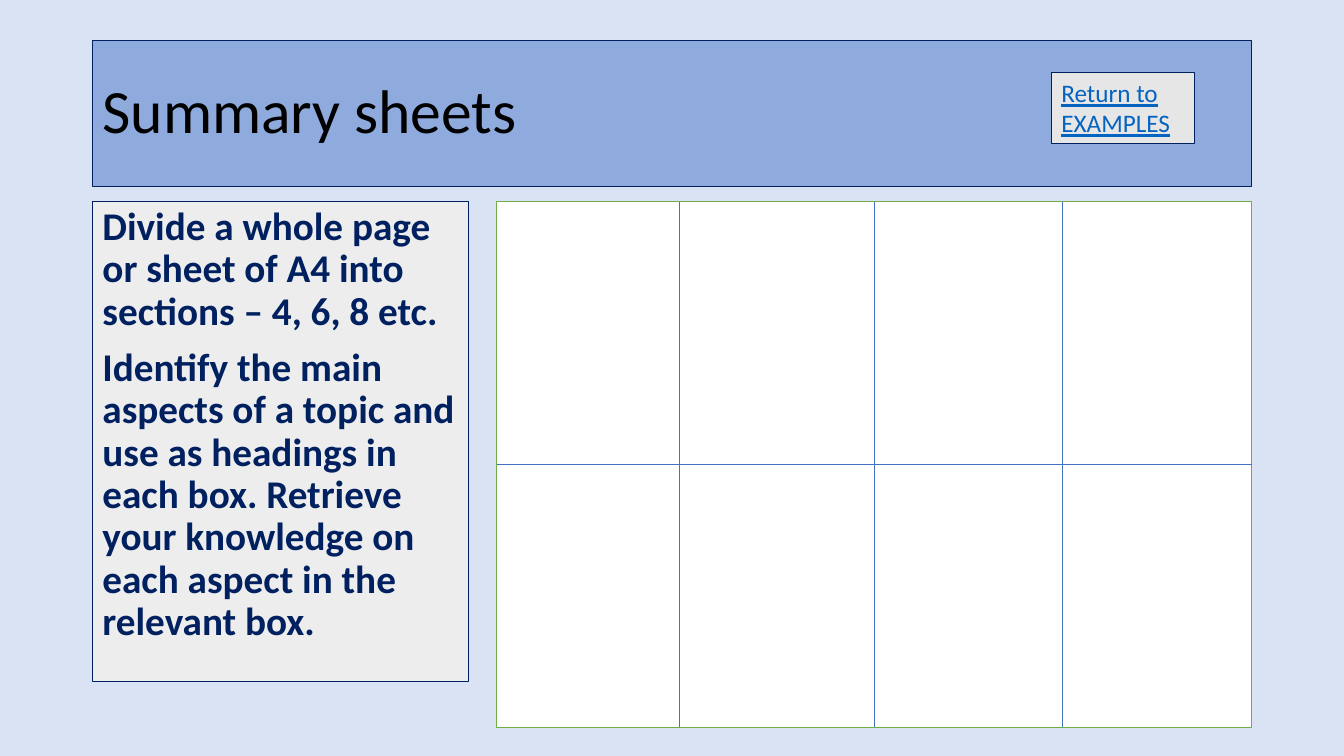
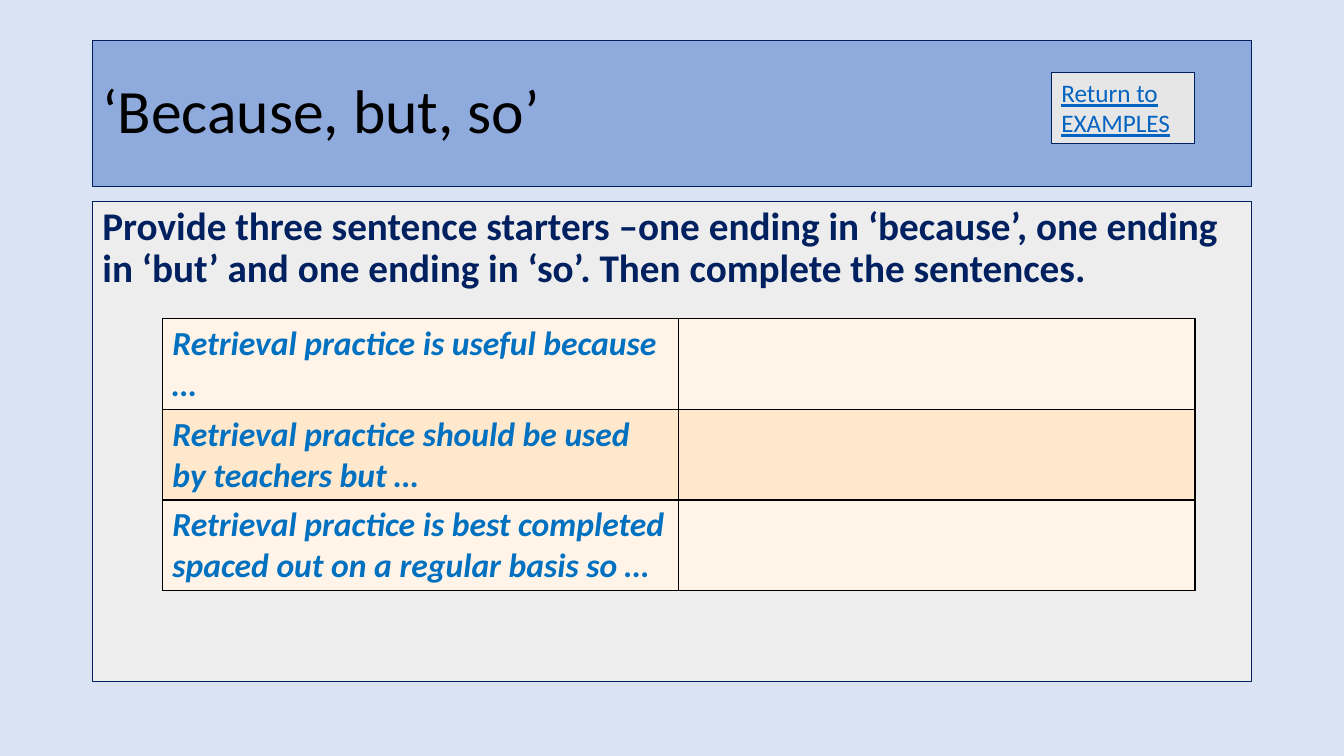
import pptx
import pptx.util
import pptx.dml.color
import pptx.enum.text
import pptx.enum.shapes
import pptx.oxml
import pptx.oxml.ns
from lxml import etree

Pt = pptx.util.Pt
TEXT = pptx.enum.text
SHAPE = pptx.enum.shapes

# Shared look
FONT = "Calibri"
NAVY, BLACK, WHITE = "002060", "000000", "FFFFFF"
PAGE, BAND, PANEL, BUTTON = "DAE3F3", "8FAADC", "EDEDED", "E7E6E6"
LINK, GRID, GREEN, BLUE = "0563C1", "4472C4", "70AD47", "0070C0"
ROWS = ["FFF4E7", "FFE8CC"]

# Shared frame, in points
LEFT, WIDTH = 66, 828
TOP, HIGH = 144, 342.7


def color(text):
    return pptx.dml.color.RGBColor.from_string(text)


def paint(shape, fill, line, weight=0.75):
    shape.fill.solid()
    shape.fill.fore_color.rgb = color(fill)
    shape.line.color.rgb = color(line)
    shape.line.width = Pt(weight)


def place(shape, x, y, w, h):
    shape.left, shape.top, shape.width, shape.height = Pt(x), Pt(y), Pt(w), Pt(h)


def style(para, size, tone, bold=False, italic=False, under=False):
    font = para.font
    font.name, font.size = FONT, Pt(size)
    font.color.rgb = color(tone)
    font.bold, font.italic, font.underline = bold, italic, under


def add_title(slide, text):
    title = slide.shapes.title
    place(title, LEFT, 28.8, WIDTH, 104.4)
    paint(title, BAND, NAVY)
    frame = title.text_frame
    frame.text = text
    frame.auto_size = TEXT.MSO_AUTO_SIZE.NONE
    frame.vertical_anchor = TEXT.MSO_ANCHOR.MIDDLE
    para = frame.paragraphs[0]
    para.alignment = TEXT.PP_ALIGN.LEFT
    para.line_spacing = 0.9
    style(para, 44, BLACK)


def add_body(slide, width, texts):
    body = slide.placeholders[1]
    place(body, LEFT, TOP, width, HIGH)
    paint(body, PANEL, NAVY)
    frame = body.text_frame
    frame.text = "\n".join(texts)
    frame.auto_size = TEXT.MSO_AUTO_SIZE.NONE
    for i, para in enumerate(frame.paragraphs):
        props = para._p.get_or_add_pPr()
        props.set("marL", "0")
        props.set("indent", "0")
        etree.SubElement(props, pptx.oxml.ns.qn("a:buNone"))
        para.line_spacing = 0.9
        para.space_before = Pt(10 if i else 0)
        style(para, 28, NAVY, bold=True)


def add_button(slide):
    box = slide.shapes.add_textbox(Pt(751), Pt(51.8), Pt(102.2), Pt(51))
    paint(box, BUTTON, NAVY)
    frame = box.text_frame
    frame.word_wrap = True
    frame.auto_size = TEXT.MSO_AUTO_SIZE.SHAPE_TO_FIT_TEXT
    frame.text = "Return to EXAMPLES"
    style(frame.paragraphs[0], 18, LINK, under=True)


def add_line(slide, x1, y1, x2, y2):
    line = slide.shapes.add_connector(
        SHAPE.MSO_CONNECTOR.STRAIGHT, Pt(x1), Pt(y1), Pt(x2), Pt(y2))
    line.line.color.rgb = color(GRID)
    line.line.width = Pt(0.5)
    etree.SubElement(line._element.spPr, pptx.oxml.ns.qn("a:effectLst"))


def add_sheet(slide, x, y, w, h, cuts):
    sheet = slide.shapes.add_shape(
        SHAPE.MSO_SHAPE.RECTANGLE, Pt(x), Pt(y), Pt(w), Pt(h))
    sheet.shadow.inherit = False
    paint(sheet, WHITE, GREEN, 1)
    for cut in cuts:
        add_line(slide, cut, y, cut, y + h)
    add_line(slide, x, y + h / 2, x + w, y + h / 2)


def add_border(cell):
    props = cell._tc.get_or_add_tcPr()
    for i, side in enumerate(["lnL", "lnR", "lnT", "lnB"]):
        props.insert(i, pptx.oxml.parse_xml(
            f'<a:{side} {pptx.oxml.ns.nsdecls("a")} w="12700"><a:solidFill>'
            f'<a:srgbClr val="{BLACK}"/></a:solidFill></a:{side}>'))


def add_table(slide, x, y, w, high, texts):
    table = slide.shapes.add_table(
        len(texts), 2, Pt(x), Pt(y), Pt(w), Pt(high * len(texts))).table
    table.first_row = table.horz_banding = False
    for i, text in enumerate(texts):
        for cell in table.rows[i].cells:
            cell.fill.solid()
            cell.fill.fore_color.rgb = color(ROWS[i % 2])
            add_border(cell)
        start = table.cell(i, 0)
        start.text = text
        style(start.text_frame.paragraphs[0], 24, BLUE, bold=True, italic=True)


def add_slide(deck, title, width, texts):
    slide = deck.slides.add_slide(deck.slide_layouts[1])
    add_title(slide, title)
    add_body(slide, width, texts)
    add_button(slide)
    return slide


def main():
    deck = pptx.Presentation()
    deck.slide_width, deck.slide_height = Pt(960), Pt(540)
    back = deck.slide_master.background.fill
    back.solid()
    back.fore_color.rgb = color(PAGE)

    # Summary sheets
    slide = add_slide(deck, "Summary sheets", 269, [
        "Divide a whole page or sheet of A4 into sections – 4, 6, 8 etc.",
        "Identify the main aspects of a topic and use as headings in each box. "
        "Retrieve your knowledge on each aspect in the relevant box.",
    ])
    add_sheet(slide, 354.7, TOP, 539.3, 375.6, [485.3, 624.4, 758.9])

    # Sentence starters
    slide = add_slide(deck, "‘Because, but, so’", WIDTH, [
        "Provide three sentence starters –one ending in ‘because’, one ending "
        "in ‘but’ and one ending in ‘so’. Then complete the sentences.",
    ])
    add_table(slide, 116, 227.5, 737.6, 64.8, [
        "Retrieval practice is useful because …",
        "Retrieval practice should be used by teachers but …",
        "Retrieval practice is best completed spaced out on a regular basis so …",
    ])

    deck.save("out.pptx")


if __name__ == "__main__":
    main()
